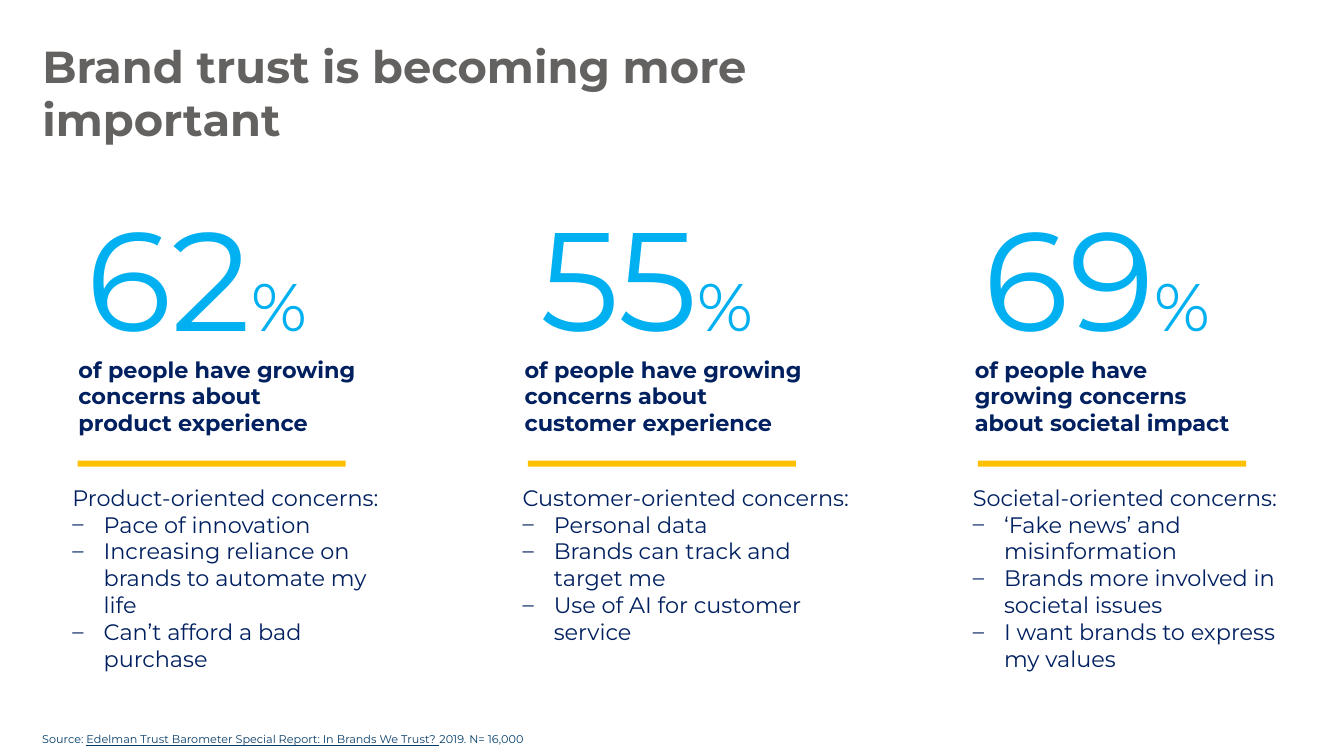
from dataclasses import dataclass

from lxml.etree import SubElement
from pptx import Presentation
from pptx.dml.color import RGBColor
from pptx.enum.shapes import MSO_SHAPE
from pptx.enum.text import MSO_ANCHOR, PP_ALIGN
from pptx.oxml.ns import qn
from pptx.util import Inches, Pt


@dataclass(frozen=True)
class Theme:
    font: str = "Montserrat"
    heading: RGBColor = RGBColor(0x64, 0x62, 0x60)
    figure: RGBColor = RGBColor(0x00, 0xB0, 0xF0)
    body: RGBColor = RGBColor(0x00, 0x20, 0x60)
    rule: RGBColor = RGBColor(0xFF, 0xC0, 0x00)
    source: RGBColor = RGBColor(0x00, 0x3D, 0x69)
    report: RGBColor = RGBColor(0x06, 0x3C, 0x68)
    heading_size: Pt = Pt(32)
    figure_size: Pt = Pt(100)
    percent_size: Pt = Pt(48)
    body_size: Pt = Pt(16)
    source_size: Pt = Pt(8)


@dataclass(frozen=True)
class Finding:
    figure: str
    claim: str
    topic: str
    concerns: tuple
    claim_offset: float = 0.18
    claim_width: float = 2.98
    concerns_width: float = 3.5


THEME = Theme()
COLUMN_LEFT, COLUMN_TOP, COLUMN_PITCH = 0.46, 1.85, 4.465
FIGURE_WIDTH = 2.98
FINDINGS = (
    Finding(
        "62",
        "of people have growing concerns about product experience",
        "Product-oriented concerns:",
        (
            "Pace of innovation",
            "Increasing reliance on brands to automate my life",
            "Can’t afford a bad purchase",
        ),
        claim_offset=0.22,
    ),
    Finding(
        "55",
        "of people have growing concerns about customer experience",
        "Customer-oriented concerns:",
        (
            "Personal data",
            "Brands can track and target me",
            "Use of AI for customer service",
        ),
    ),
    Finding(
        "69",
        "of people have growing concerns about societal impact",
        "Societal-oriented concerns:",
        (
            "‘Fake news’ and misinformation",
            "Brands more involved in societal issues",
            "I want brands to express my values",
        ),
        claim_width=2.82,
        concerns_width=3.32,
    ),
)


def style(font, size, color, bold=False):
    font.name = THEME.font
    font.size = size
    font.bold = bold
    font.color.rgb = color


def add_text_frame(slide, left, top, width, height):
    box = slide.shapes.add_textbox(Inches(left), Inches(top), Inches(width), Inches(height))
    box.text_frame.word_wrap = True
    return box.text_frame


def add_dash(paragraph):
    properties = paragraph._p.get_or_add_pPr()
    properties.set("marL", str(Inches(0.31)))
    properties.set("indent", str(-Inches(0.31)))
    SubElement(properties, qn("a:buFont"), typeface=THEME.font)
    SubElement(properties, qn("a:buChar"), char="–")


def add_heading(slide, left, top, width, height):
    heading = slide.shapes.title
    heading.left, heading.top = Inches(left), Inches(top)
    heading.width, heading.height = Inches(width), Inches(height)
    frame = heading.text_frame
    frame.word_wrap = True
    frame.vertical_anchor = MSO_ANCHOR.TOP
    frame.text = "Brand trust is becoming more important"
    paragraph = frame.paragraphs[0]
    paragraph.alignment = PP_ALIGN.LEFT
    paragraph.line_spacing = 1.0
    style(paragraph.font, THEME.heading_size, THEME.heading, bold=True)


def add_figure(slide, figure, left, top, width, height):
    paragraph = add_text_frame(slide, left, top, width, height).paragraphs[0]
    paragraph.alignment = PP_ALIGN.CENTER
    for text, size in ((figure, THEME.figure_size), ("%", THEME.percent_size)):
        run = paragraph.add_run()
        run.text = text
        style(run.font, size, THEME.figure)


def add_claim(slide, claim, left, top, width, height):
    paragraph = add_text_frame(slide, left, top, width, height).paragraphs[0]
    paragraph.text = claim
    style(paragraph.font, THEME.body_size, THEME.body, bold=True)


def add_rule(slide, left, top, width, height):
    rule = slide.shapes.add_shape(
        MSO_SHAPE.RECTANGLE, Inches(left), Inches(top), Inches(width), Inches(height)
    )
    rule.shadow.inherit = False
    rule.fill.solid()
    rule.fill.fore_color.rgb = THEME.rule
    rule.line.fill.background()


def add_concerns(slide, topic, concerns, left, top, width, height):
    frame = add_text_frame(slide, left, top, width, height)
    frame.text = "\n".join((topic, *concerns))
    for paragraph in frame.paragraphs[1:]:
        add_dash(paragraph)
    for paragraph in frame.paragraphs:
        style(paragraph.font, THEME.body_size, THEME.body)


def add_finding(slide, finding, left, top, width):
    add_figure(slide, finding.figure, left, top, width, 2.15)
    add_claim(
        slide, finding.claim, left + finding.claim_offset, top + 1.63, finding.claim_width, 0.91
    )
    add_rule(slide, left + 0.31, top + 2.72, width - 0.32, 0.06)
    add_concerns(
        slide, finding.topic, finding.concerns,
        left + 0.16, top + 2.9, finding.concerns_width, 1.99,
    )


def add_source(slide, left, top, width, height):
    paragraph = add_text_frame(slide, left, top, width, height).paragraphs[0]
    for text, color, underlined in (
        ("Source: ", THEME.source, False),
        ("Edelman Trust Barometer Special Report: In Brands We Trust? ", THEME.report, True),
        ("2019. N= 16,000", THEME.source, False),
    ):
        run = paragraph.add_run()
        run.text = text
        style(run.font, THEME.source_size, color)
        run.font.underline = underlined


def main():
    deck = Presentation()
    deck.slide_width, deck.slide_height = Inches(13.33), Inches(7.5)
    slide = deck.slides.add_slide(deck.slide_layouts.get_by_name("Title Only"))
    add_heading(slide, 0.32, 0.33, 9.26, 1.18)
    for column, finding in enumerate(FINDINGS):
        add_finding(slide, finding, COLUMN_LEFT + column * COLUMN_PITCH, COLUMN_TOP, FIGURE_WIDTH)
    add_source(slide, 0.32, 7.22, 12.41, 0.24)
    deck.save("out.pptx")


if __name__ == "__main__":
    main()
